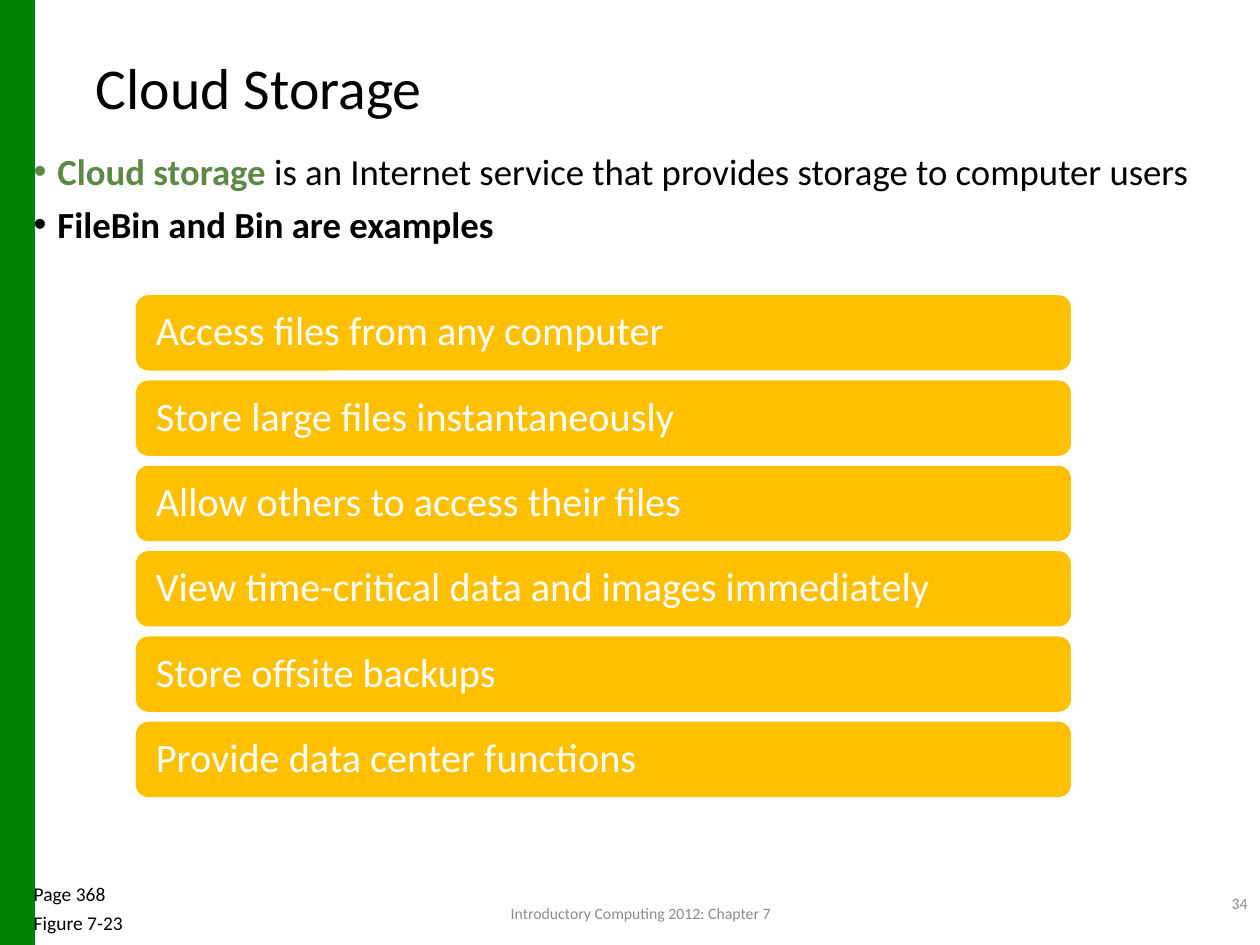
"""Build the Cloud Storage slide with its list of six uses."""
from lxml import etree
from pptx import Presentation
from pptx.dml.color import RGBColor
from pptx.enum.shapes import MSO_SHAPE
from pptx.enum.text import MSO_ANCHOR, PP_ALIGN
from pptx.oxml.ns import qn
from pptx.util import Cm, Pt

RECTANGLE, ROUNDED = MSO_SHAPE.RECTANGLE, MSO_SHAPE.ROUNDED_RECTANGLE
TOP, MIDDLE = MSO_ANCHOR.TOP, MSO_ANCHOR.MIDDLE
LEFT, CENTER, RIGHT = PP_ALIGN.LEFT, PP_ALIGN.CENTER, PP_ALIGN.RIGHT

THEME = {
    "font": "Calibri",
    "black": "000000", "white": "FFFFFF", "grey": "8C8C8C",
    "band": "008000", "term": "5E8945", "bar": "FFC000",
    "title": 33, "body": 21, "use": 23, "footer": 9, "reference": 11.1,
}

TITLE = "Cloud Storage"
POINTS = [
    [("Cloud storage ", "term", True),
     ("is an Internet service that provides storage to computer users", "black", False)],
    [("FileBin and Bin are examples", "black", True)],
]
USES = [
    "Access files from any computer",
    "Store large files instantaneously",
    "Allow others to access their files",
    "View time-critical data and images immediately",
    "Store offsite backups",
    "Provide data center functions",
]
REFERENCES = ["Page 368", "Figure 7-23"]
FOOTER = "Introductory Computing 2012: Chapter 7"
PAGE_NUMBER = "34"

BAR_LEFT, BAR_TOP, BAR_WIDTH, BAR_HEIGHT, BAR_PITCH = 2.74, 5.95, 18.85, 1.52, 1.72
BAR_INSET = 0.33
HANGING = 0.48


def color(name):
    return RGBColor.from_string(THEME[name])


def write(frame, paragraphs, size, ink="black", anchor=TOP, align=LEFT,
          spacing=1.0, before=0, hanging=0, bullet=None):
    """Fill a text frame; a paragraph is a string or a list of (text, colour, bold)."""
    frame.word_wrap = True
    frame.vertical_anchor = anchor
    for index, content in enumerate(paragraphs):
        paragraph = frame.add_paragraph() if index else frame.paragraphs[0]
        paragraph.alignment = align
        paragraph.line_spacing = spacing
        paragraph.space_before = Pt(before)
        properties = paragraph._p.get_or_add_pPr()
        if hanging:
            properties.set("marL", str(Cm(hanging)))
            properties.set("indent", str(-Cm(hanging)))
        if bullet:
            etree.SubElement(properties, qn("a:buFont")).set("typeface", "Arial")
            etree.SubElement(properties, qn("a:buChar")).set("char", bullet)
        pieces = [(content, ink, False)] if isinstance(content, str) else content
        for text, tone, bold in pieces:
            run = paragraph.add_run()
            run.text = text
            run.font.name = THEME["font"]
            run.font.size = Pt(THEME[size])
            run.font.bold = bold
            run.font.color.rgb = color(tone)


def add_text(slide, box, paragraphs, size, **style):
    textbox = slide.shapes.add_textbox(*map(Cm, box))
    write(textbox.text_frame, paragraphs, size, **style)


def add_block(slide, preset, box, fill):
    block = slide.shapes.add_shape(preset, *map(Cm, box))
    block.shadow.inherit = False
    block.fill.solid()
    block.fill.fore_color.rgb = color(fill)
    block.line.fill.background()
    return block


def main():
    deck = Presentation()
    deck.slide_width, deck.slide_height = Cm(25.4), Cm(19.05)
    slide = deck.slides.add_slide(deck.slide_layouts[6])

    band = add_block(slide, RECTANGLE, (0, 0, 0.69, 19.05), "band")
    band.line.color.rgb = color("band")
    band.line.width = Pt(0.75)

    add_text(slide, (1.68, 0, 21.9, 3.68), [TITLE], "title", anchor=MIDDLE, spacing=0.9)
    add_text(slide, (0.43, 2.97, 24.97, 14.4), POINTS, "body",
             spacing=0.9, before=7.5, hanging=HANGING, bullet="•")
    add_text(slide, (7.62, 17.78, 10.59, 1.27), [FOOTER], "footer",
             ink="grey", anchor=MIDDLE, align=CENTER)
    add_text(slide, (23.7, 17.35, 1.7, 1.7), [PAGE_NUMBER], "footer",
             ink="grey", anchor=MIDDLE, align=RIGHT)
    add_text(slide, (0.43, 17.78, 4.65, 1.27), REFERENCES, "reference",
             spacing=0.7, before=7.5, hanging=HANGING)

    for row, use in enumerate(USES):
        top = BAR_TOP + row * BAR_PITCH
        bar = add_block(slide, ROUNDED, (BAR_LEFT, top, BAR_WIDTH, BAR_HEIGHT), "bar")
        frame = bar.text_frame
        frame.margin_left = frame.margin_right = Cm(BAR_INSET)
        write(frame, [use], "use", ink="white", anchor=MIDDLE, spacing=0.9)

    deck.save("out.pptx")


if __name__ == "__main__":
    main()
